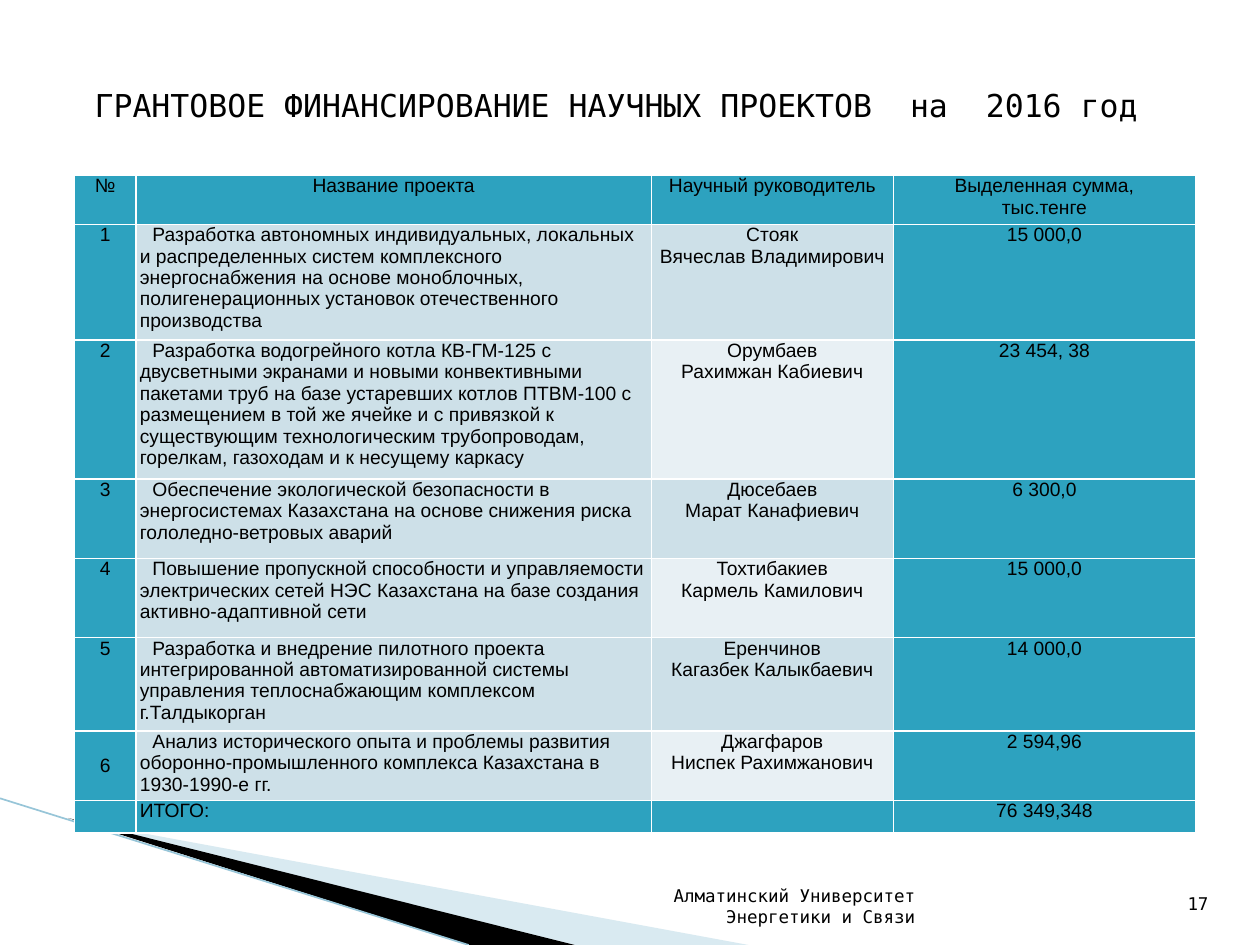
import dataclasses

import lxml.etree
import pptx
import pptx.dml.color
import pptx.enum.shapes
import pptx.enum.text
import pptx.oxml
import pptx.oxml.ns
import pptx.util

ALIGN = pptx.enum.text.PP_ALIGN
ANCHOR = pptx.enum.text.MSO_ANCHOR
GRID_COLUMNS, GRID_ROWS = 100, 75


@dataclasses.dataclass(frozen=True)
class Theme:
    heading_font: str = "DejaVu Sans Mono"
    table_font: str = "Arial"
    title_size: float = 18
    table_size: float = 11
    footer_size: float = 10
    ink: str = "000000"
    accent: str = "2DA2BF"
    band_dark: str = "CDE0E8"
    band_light: str = "E8F0F4"
    border: str = "FFFFFF"
    wedge: str = "A0CBDC"
    edge: str = "97C5D8"


@dataclasses.dataclass(frozen=True)
class Box:
    left: int
    top: int
    width: int
    height: int

    def point(self, across, down):
        return round(self.left + across * self.width), round(self.top + down * self.height)

    def bounds(self):
        return self.left, self.top, self.width, self.height


THEME = Theme()
TITLE = "ГРАНТОВОЕ ФИНАНСИРОВАНИЕ НАУЧНЫХ ПРОЕКТОВ  на  2016 год"
HEADER = ("№", "Название проекта", "Научный руководитель", "Выделенная сумма,\nтыс.тенге")
PROJECTS = [
    ("1", "Разработка автономных индивидуальных, локальных и распределенных систем комплексного "
     "энергоснабжения на основе моноблочных, полигенерационных установок отечественного производства",
     "Стояк\nВячеслав Владимирович", "15 000,0"),
    ("2", "Разработка водогрейного котла КВ-ГМ-125 с двусветными экранами и новыми конвективными "
     "пакетами труб на базе устаревших котлов ПТВМ-100 с размещением в той же ячейке и с привязкой "
     "к существующим технологическим трубопроводам, горелкам, газоходам и к несущему каркасу",
     "Орумбаев\nРахимжан Кабиевич", "23 454, 38"),
    ("3", "Обеспечение экологической безопасности в энергосистемах Казахстана на основе снижения "
     "риска гололедно-ветровых аварий",
     "Дюсебаев\nМарат Канафиевич", "6 300,0"),
    ("4", "Повышение пропускной способности и управляемости электрических сетей НЭС Казахстана "
     "на базе создания активно-адаптивной сети",
     "Тохтибакиев\nКармель Камилович", "15 000,0"),
    ("5", "Разработка и внедрение пилотного проекта интегрированной автоматизированной системы "
     "управления теплоснабжающим комплексом г.Талдыкорган",
     "Еренчинов\nКагазбек Калыкбаевич", "14 000,0"),
    ("6", "Анализ исторического опыта и проблемы развития оборонно-промышленного комплекса "
     "Казахстана в 1930-1990-е гг.",
     "Джагфаров\nНиспек Рахимжанович", "2 594,96"),
]
TOTAL = ("", "ИТОГО:", "", "76 349,348")
COLUMN_WEIGHTS = (0.49, 4.09, 1.92, 2.4)
ROW_WEIGHTS = (0.39, 0.92, 1.1, 0.63, 0.63, 0.74, 0.55, 0.26)


def color(value):
    return pptx.dml.color.RGBColor.from_string(value)


def grid_box(presentation, column, row, columns, rows):
    column_width = presentation.slide_width / GRID_COLUMNS
    row_height = presentation.slide_height / GRID_ROWS
    return Box(round(column * column_width), round(row * row_height),
               round(columns * column_width), round(rows * row_height))


def format_paragraph(paragraph, font, size, alignment):
    paragraph.alignment = alignment
    paragraph.font.name = font
    paragraph.font.size = pptx.util.Pt(size)
    paragraph.font.color.rgb = color(THEME.ink)


def draw_wedge(slide, box, corners, fill, opacity=100):
    points = [box.point(*corner) for corner in corners]
    builder = slide.shapes.build_freeform(*points[0], scale=1.0)
    builder.add_line_segments(points[1:], close=True)
    shape = builder.convert_to_shape()
    shape.shadow.inherit = False
    shape.fill.solid()
    shape.fill.fore_color.rgb = color(fill)
    shape.line.fill.background()
    if opacity < 100:
        fill_color = shape.fill._xPr.find(".//" + pptx.oxml.ns.qn("a:srgbClr"))
        alpha = lxml.etree.SubElement(fill_color, pptx.oxml.ns.qn("a:alpha"))
        alpha.set("val", str(opacity * 1000))


def draw_corner(slide, box):
    draw_wedge(slide, box, [(0.09, 0.17), (0.99, 1), (0.76, 1)], THEME.wedge, 40)
    draw_wedge(slide, box, [(0.09, 0.16), (0.76, 1), (0.62, 1)], THEME.ink)
    line = slide.shapes.add_connector(pptx.enum.shapes.MSO_CONNECTOR.STRAIGHT,
                                      *box.point(0, 0.03), *box.point(0.62, 1))
    line.line.color.rgb = color(THEME.edge)
    line.line.width = pptx.util.Pt(0.95)
    lxml.etree.SubElement(line._element.spPr, pptx.oxml.ns.qn("a:effectLst"))


def draw_title(slide, box):
    title = slide.shapes.title
    title.left, title.top, title.width, title.height = box.bounds()
    title.text_frame.text = TITLE
    title.text_frame.vertical_anchor = ANCHOR.MIDDLE
    title.text_frame.auto_size = pptx.enum.text.MSO_AUTO_SIZE.NONE
    format_paragraph(title.text_frame.paragraphs[0], THEME.heading_font, THEME.title_size, ALIGN.CENTER)


def draw_footer_text(slide, box, text):
    frame = slide.shapes.add_textbox(*box.bounds()).text_frame
    frame.word_wrap = True
    frame.vertical_anchor = ANCHOR.BOTTOM
    frame.text = text
    format_paragraph(frame.paragraphs[0], THEME.heading_font, THEME.footer_size, ALIGN.RIGHT)


def add_borders(cell):
    properties = cell._tc.get_or_add_tcPr()
    for index, side in enumerate(("lnL", "lnR", "lnT", "lnB")):
        properties.insert(index, pptx.oxml.parse_xml(
            f'<a:{side} {pptx.oxml.ns.nsdecls("a")} w="12700"><a:solidFill>'
            f'<a:srgbClr val="{THEME.border}"/></a:solidFill></a:{side}>'))


def cell_fill(row, column):
    if row in (0, len(PROJECTS) + 1) or column in (0, 3):
        return THEME.accent
    return THEME.band_light if column == 2 and row % 2 == 0 else THEME.band_dark


def fill_cell(cell, text, row, column):
    is_project = 0 < row <= len(PROJECTS)
    cell.text = text
    cell.margin_left = cell.margin_right = pptx.util.Inches(0.03)
    cell.margin_top = cell.margin_bottom = 0
    cell.vertical_anchor = ANCHOR.MIDDLE if text == "6" else ANCHOR.TOP
    cell.fill.solid()
    cell.fill.fore_color.rgb = color(cell_fill(row, column))
    add_borders(cell)
    alignment = ALIGN.LEFT if column == 1 and row > 0 else ALIGN.CENTER
    for paragraph in cell.text_frame.paragraphs:
        if column == 1 and is_project:
            paragraph._p.get_or_add_pPr().set("indent", str(pptx.util.Inches(0.1)))
        format_paragraph(paragraph, THEME.table_font, THEME.table_size, alignment)


def draw_table(slide, box):
    content = [HEADER, *PROJECTS, TOTAL]
    table = slide.shapes.add_table(len(content), len(HEADER), *box.bounds()).table
    table.first_row = table.horz_banding = False
    for column, weight in zip(table.columns, COLUMN_WEIGHTS):
        column.width = round(box.width * weight / sum(COLUMN_WEIGHTS))
    for row, weight in zip(table.rows, ROW_WEIGHTS):
        row.height = round(box.height * weight / sum(ROW_WEIGHTS))
    for row, texts in enumerate(content):
        for column, text in enumerate(texts):
            fill_cell(table.cell(row, column), text, row, column)


def main():
    presentation = pptx.Presentation()
    presentation.slide_width = pptx.util.Inches(10)
    presentation.slide_height = pptx.util.Inches(7.5)
    slide = presentation.slides.add_slide(presentation.slide_layouts[5])
    draw_corner(slide, grid_box(presentation, 0, 63, 60, 12))
    draw_footer_text(slide, grid_box(presentation, 47.9, 70.1, 25.7, 4),
                     "Алматинский Университет Энергетики и Связи")
    draw_footer_text(slide, grid_box(presentation, 88.6, 69, 8.3, 4), "17")
    draw_title(slide, grid_box(presentation, 4.5, 6.3, 88.8, 4))
    draw_table(slide, grid_box(presentation, 5.9, 13.9, 89, 52.2))
    presentation.save("out.pptx")


if __name__ == "__main__":
    main()
